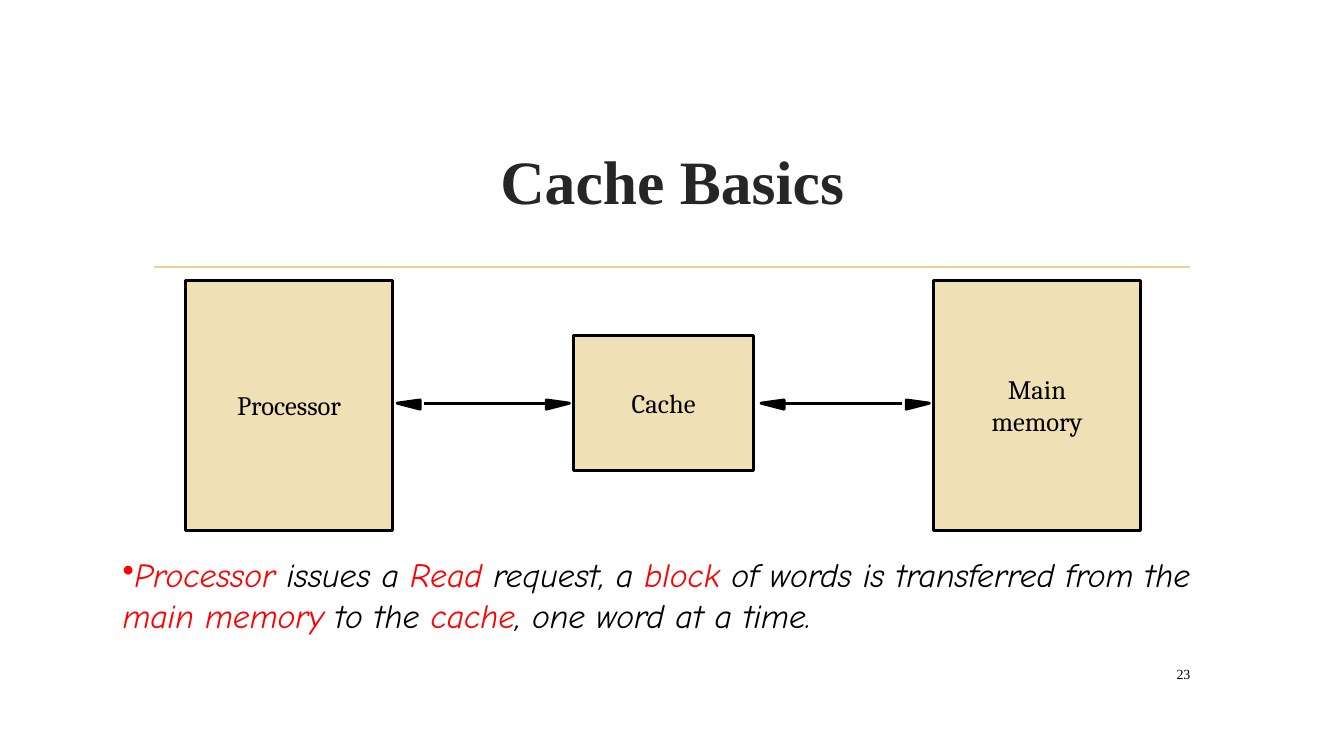
from lxml.etree import SubElement
from pptx import Presentation
from pptx.dml.color import RGBColor
from pptx.enum.shapes import MSO_CONNECTOR, MSO_SHAPE
from pptx.enum.text import MSO_ANCHOR, PP_ALIGN
from pptx.oxml.ns import qn
from pptx.util import Cm, Pt

COLORS = {"title": "262626", "ink": "000000", "key": "FF0000",
          "box": "F0E0B5", "rule": "E8D191"}
TITLE = dict(size=Pt(44), name="Times New Roman", bold=True)
LABEL = dict(size=Pt(19), name="Cambria")
BODY = dict(size=Pt(24), name="Comic Neue", italic=True)
NUMBER = dict(size=Pt(10), name="Times New Roman")
STROKE = Pt(2.13)


def rgb(key):
    return RGBColor.from_string(COLORS[key])


def add_run(p, text, fmt, color):
    r = p.add_run()
    r.text = text
    for name, value in fmt.items():
        setattr(r.font, name, value)
    r.font.color.rgb = rgb(color)


def text_box(s, box, anchor=MSO_ANCHOR.TOP, align=PP_ALIGN.LEFT):
    """Add an empty wrapping text box and return its first paragraph."""
    tf = s.shapes.add_textbox(*map(Cm, box)).text_frame
    tf.word_wrap = True
    tf.vertical_anchor = anchor
    p = tf.paragraphs[0]
    p.alignment = align
    return p


def straight_line(s, x1, x2, y, color, width):
    line = s.shapes.add_connector(MSO_CONNECTOR.STRAIGHT, Cm(x1), Cm(y), Cm(x2), Cm(y))
    line.line.color.rgb = rgb(color)
    line.line.width = width
    SubElement(line._element.spPr, qn("a:effectLst"))


def header(s, box, text):
    p = text_box(s, box, MSO_ANCHOR.MIDDLE, PP_ALIGN.CENTER)
    add_run(p, text, TITLE, "title")
    left, top, width, height = box
    straight_line(s, left + 0.28, left + width - 0.28, top + height + 0.38,
                  "rule", Pt(1.25))


def unit(s, box, lines):
    """A labelled hardware block."""
    sp = s.shapes.add_shape(MSO_SHAPE.RECTANGLE, *map(Cm, box))
    sp.shadow.inherit = False
    sp.fill.solid()
    sp.fill.fore_color.rgb = rgb("box")
    sp.line.color.rgb = rgb("ink")
    sp.line.width = STROKE
    tf = sp.text_frame
    tf.vertical_anchor = MSO_ANCHOR.MIDDLE
    for i, text in enumerate(lines):
        p = tf.add_paragraph() if i else tf.paragraphs[0]
        p.alignment = PP_ALIGN.CENTER
        add_run(p, text, LABEL, "ink")


def double_arrow(s, x1, x2, y, gap1=0, gap2=0, head=0.58):
    """A shaft with a slim head at each end, each set off by its gap."""
    for tip, back in ((x1, x1 + head), (x2, x2 - head)):
        fb = s.shapes.build_freeform(Cm(back), Cm(y - 0.08))
        fb.add_line_segments([(Cm(tip), Cm(y)), (Cm(back), Cm(y + 0.15))], close=True)
        sp = fb.convert_to_shape()
        sp.shadow.inherit = False
        sp.fill.solid()
        sp.fill.fore_color.rgb = rgb("ink")
        sp.line.color.rgb = rgb("ink")
        sp.line.width = STROKE
    straight_line(s, x1 + head + gap1, x2 - head - gap2, y, "ink", STROKE)


def diagram(s, box):
    left, top, width, height = box
    side = 5.23
    mid = left + 9.78
    double_arrow(s, left + 5.34, mid - 0.1, top + 3.1, gap1=0.1)
    double_arrow(s, mid + 4.73, left + width - side - 0.1, top + 3.1, gap2=0.1)
    unit(s, (left, top, side, height), ["Processor"])
    unit(s, (mid, top + 1.4, 4.55, 3.4), ["Cache"])
    unit(s, (left + width - side, top, side, height), ["Main", "memory"])


def explanation(s, box, parts):
    """A bulleted sentence whose parts alternate between key and plain text."""
    p = text_box(s, box)
    SubElement(p._p.get_or_add_pPr(), qn("a:buChar")).set("char", "•")
    for i, text in enumerate(parts):
        add_run(p, text, BODY, "ink" if i % 2 else "key")


def page_number(s, box, text):
    p = text_box(s, box, MSO_ANCHOR.MIDDLE, PP_ALIGN.RIGHT)
    add_run(p, text, NUMBER, "ink")


def main():
    prs = Presentation()
    prs.slide_width, prs.slide_height = Cm(33.87), Cm(19.05)
    s = prs.slides.add_slide(prs.slide_layouts[6])
    header(s, (3.61, 2.72, 26.67, 3.63), "Cache Basics")
    diagram(s, (4.67, 7.06, 24.08, 6.3))
    explanation(s, (2.84, 13.84, 29.21, 2.31), [
        "Processor", " issues a ", "Read ", "request, a ", "block",
        " of words is transferred from the ", "main memory ", "to the ",
        "cache", ", one word at a time."])
    page_number(s, (28.75, 16.59, 1.5, 0.79), "23")
    prs.save("out.pptx")


if __name__ == "__main__":
    main()
